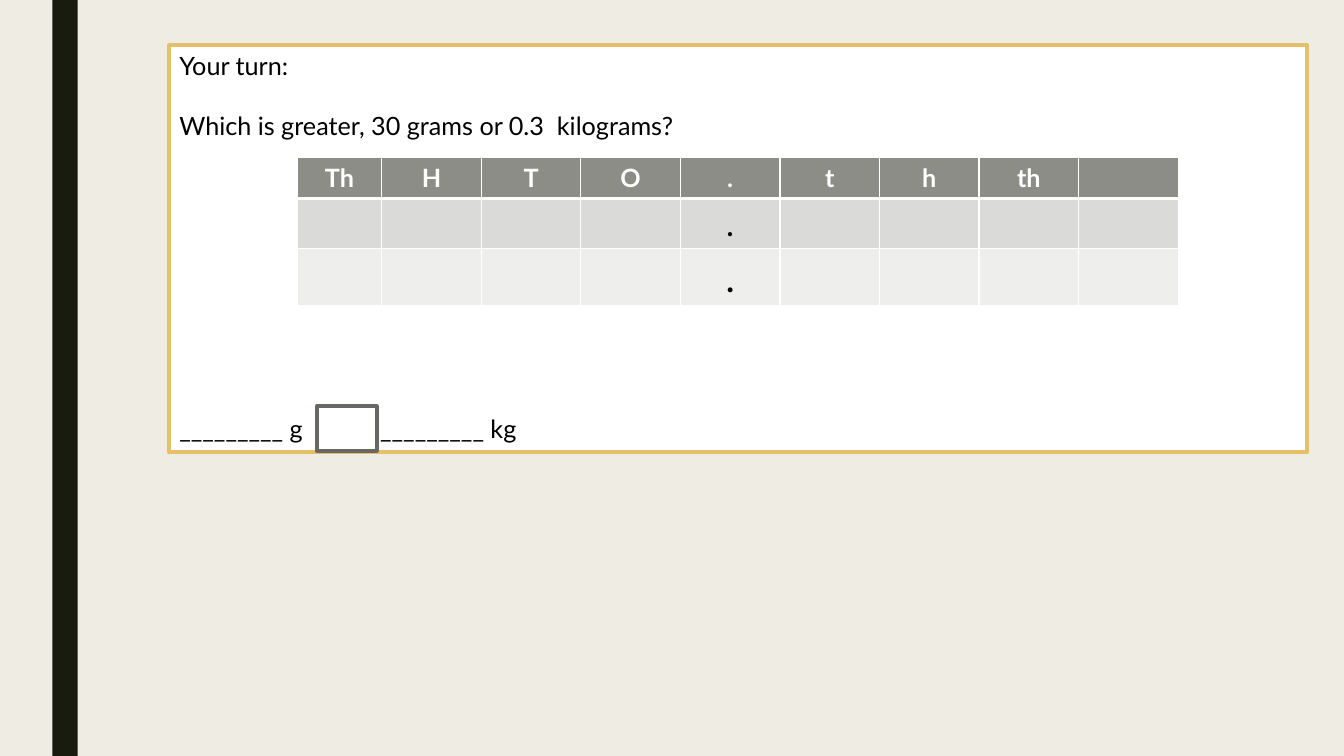
from lxml import etree
from pptx import Presentation
from pptx.dml.color import RGBColor
from pptx.enum import shapes, text
from pptx.oxml import ns
from pptx.util import Cm, Pt

FONT = "Lato"
LINE_HEIGHT = 21.6
PROMPT = [
    ("Your turn:", 0),
    ("Which is greater, 30 grams or 0.3  kilograms?", 1),
    ("_________ g\t_________ kg", 9),
]
ANSWER_TAB = Cm(5.06)

PLACES = ["Th", "H", "T", "O", ".", "t", "h", "th", ""]
POINT_ROW = ["", "", "", "", ".", "", "", "", ""]
ROWS = [
    (PLACES, 1.04, "8C8D86", "FFFFFF", 18, True, 3),
    (POINT_ROW, 1.27, "DADBD9", "000000", 24, False, 1),
    (POINT_ROW, 1.44, "EEEEED", "000000", 28, False, 1),
]
COLUMN_WIDTHS = [2.13] + [2.51] * 8

STRIPE = (1.32, 0, 0.64, 19.05)
PANEL = (4.27, 1.14, 28.68, 10.26)
ANSWER_BOX = (7.98, 10.24, 1.52, 1.12)
TABLE_CORNER = (7.49, 3.96)


def paint(target, color):
    target.solid()
    target.fore_color.rgb = RGBColor.from_string(color)


def add_box(page, place, fill, line=None):
    box = page.shapes.add_shape(shapes.MSO_SHAPE.RECTANGLE, *map(Cm, place))
    box.shadow.inherit = False
    paint(box.fill, fill)
    if line:
        paint(box.line.fill, line)
        box.line.width = Pt(2.75)
    else:
        box.line.fill.background()
    return box


def add_span(para, words, size, color, bold=False):
    span = para.add_run()
    span.text = words
    span.font.name = FONT
    span.font.size = Pt(size)
    span.font.bold = bold
    paint(span.font.fill, color)


def add_prompt(panel):
    frame = panel.text_frame
    frame.word_wrap = True
    frame.vertical_anchor = text.MSO_ANCHOR.TOP
    for index, (words, blank_lines) in enumerate(PROMPT):
        para = frame.add_paragraph() if index else frame.paragraphs[0]
        para.alignment = text.PP_ALIGN.LEFT
        para.space_before = Pt(blank_lines * LINE_HEIGHT)
        add_span(para, words, 18, "000000")
        if "\t" in words:
            tabs = etree.SubElement(para._p.get_or_add_pPr(), ns.qn("a:tabLst"))
            etree.SubElement(tabs, ns.qn("a:tab"), pos=str(ANSWER_TAB), algn="l")


def add_borders(cell, bottom, top):
    properties = cell._tc.get_or_add_tcPr()
    for side, width in (("L", 1), ("R", 1), ("T", top), ("B", bottom)):
        border = etree.SubElement(properties, ns.qn("a:ln" + side), w=str(Pt(width)))
        fill = etree.SubElement(border, ns.qn("a:solidFill"))
        etree.SubElement(fill, ns.qn("a:srgbClr"), val="FFFFFF")


def add_place_table(page):
    size = (sum(COLUMN_WIDTHS), sum(row[1] for row in ROWS))
    place = map(Cm, TABLE_CORNER + size)
    table = page.shapes.add_table(len(ROWS), len(PLACES), *place).table
    for column, width in zip(table.columns, COLUMN_WIDTHS):
        column.width = Cm(width)
    top = 1
    for index, (labels, height, fill, color, points, bold, bottom) in enumerate(ROWS):
        table.rows[index].height = Cm(height)
        for cell, label in zip(table.rows[index].cells, labels):
            add_borders(cell, bottom, top)
            paint(cell.fill, fill)
            if label:
                para = cell.text_frame.paragraphs[0]
                para.alignment = text.PP_ALIGN.CENTER
                add_span(para, label, points, color, bold)
        top = bottom


def main():
    deck = Presentation()
    deck.slide_width, deck.slide_height = Cm(33.87), Cm(19.05)
    page = deck.slides.add_slide(deck.slide_layouts[6])
    paint(page.background.fill, "EFEDE3")
    add_box(page, STRIPE, "191B0E")
    add_prompt(add_box(page, PANEL, "FFFFFF", "E6C069"))
    add_place_table(page)
    add_box(page, ANSWER_BOX, "FFFFFF", "686863")
    deck.save("out.pptx")


if __name__ == "__main__":
    main()
